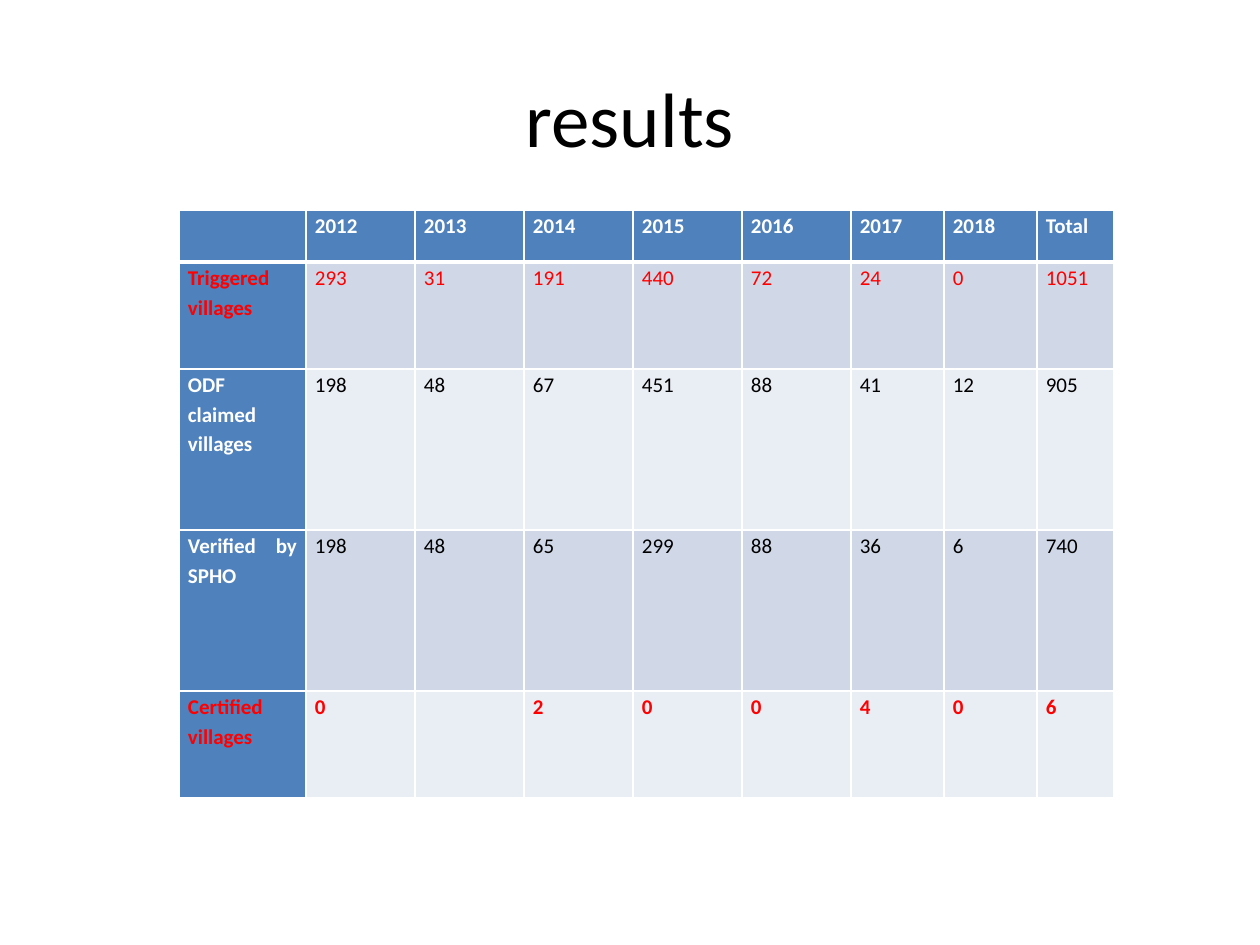
from dataclasses import dataclass

from lxml import etree
from pptx import Presentation
from pptx import util as u
from pptx.dml.color import RGBColor
from pptx.enum import text
from pptx.oxml import ns

PX = 914400 / 126  # EMU in one px


def px(length):
    return u.Emu(round(length * PX))


@dataclass(frozen=True)
class Theme:
    font: str = "Calibri"
    title_size: int = 44
    table_size: int = 12
    black: str = "000000"
    white: str = "FFFFFF"
    red: str = "FF0000"
    blue: str = "4F81BD"
    bands: tuple = ("D0D8E8", "E9EDF4")


def write(frame, words, *, font, size, color, bold=False, align=None, spacing=None):
    """Put one formatted paragraph into a text frame."""
    paragraph = frame.paragraphs[0]
    paragraph.alignment = align
    paragraph.line_spacing = spacing
    run = paragraph.add_run()
    run.text = words
    run.font.name = font
    run.font.size = u.Pt(size)
    run.font.bold = bold
    run.font.color.rgb = RGBColor.from_string(color)


class SlideBuilder:
    def __init__(self, presentation, theme):
        self.theme = theme
        self.slide = presentation.slides.add_slide(presentation.slide_layouts[5])

    def title(self, words, left, top, width, height):
        shape = self.slide.shapes.title
        shape.left, shape.top = px(left), px(top)
        shape.width, shape.height = px(width), px(height)
        shape.text_frame.vertical_anchor = text.MSO_ANCHOR.MIDDLE
        write(shape.text_frame, words, font=self.theme.font,
              size=self.theme.title_size, color=self.theme.black,
              align=text.PP_ALIGN.CENTER)

    def border(self, cell, side, points):
        properties = cell._tc.get_or_add_tcPr()
        line = etree.SubElement(properties, ns.qn(f"a:ln{side}"), w=str(u.Pt(points)))
        fill = etree.SubElement(line, ns.qn("a:solidFill"))
        etree.SubElement(fill, ns.qn("a:srgbClr"), val=self.theme.white)

    def cell(self, cell, words, *, fill, color, bold, top=1, bottom=1):
        cell.margin_left = cell.margin_right = px(9)
        cell.margin_top = cell.margin_bottom = 0
        for side, points in (("L", 1), ("R", 1), ("T", top), ("B", bottom)):
            self.border(cell, side, points)
        cell.fill.solid()
        cell.fill.fore_color.rgb = RGBColor.from_string(fill)
        if words:
            write(cell.text_frame, words, font=self.theme.font,
                  size=self.theme.table_size, color=color, bold=bold,
                  align=text.PP_ALIGN.JUSTIFY, spacing=1.15)

    def table(self, rows, left, top, widths, heights, red_rows, bold_rows):
        theme = self.theme
        frame = self.slide.shapes.add_table(
            len(rows), len(widths), px(left), px(top), px(sum(widths)), px(sum(heights)))
        table = frame.table
        table.first_row = table.horz_banding = False
        for column, width in zip(table.columns, widths):
            column.width = px(width)
        for row, height in zip(table.rows, heights):
            row.height = px(height)

        for r, row in enumerate(rows):
            for c, words in enumerate(row):
                heading = r == 0 or c == 0
                if r in red_rows:
                    color = theme.red
                else:
                    color = theme.white if heading else theme.black
                self.cell(table.cell(r, c), words,
                          fill=theme.blue if heading else theme.bands[(r - 1) % 2],
                          color=color, bold=heading or r in bold_rows,
                          top=3 if r == 1 else 1, bottom=3 if r == 0 else 1)


def main():
    presentation = Presentation()
    presentation.slide_width, presentation.slide_height = px(1260), px(945)
    builder = SlideBuilder(presentation, Theme())

    # Title
    builder.title("results", 63, 38, 1134, 157)

    # Villages by year
    rows = [
        ["", "2012", "2013", "2014", "2015", "2016", "2017", "2018", "Total"],
        ["Triggered villages", "293", "31", "191", "440", "72", "24", "0", "1051"],
        ["ODF claimed villages", "198", "48", "67", "451", "88", "41", "12", "905"],
        ["Verified by SPHO", "198", "48", "65", "299", "88", "36", "6", "740"],
        ["Certified villages", "0", "", "2", "0", "0", "4", "0", "6"],
    ]
    builder.table(rows, 179, 210,
                  widths=[127] + [109] * 5 + [93] * 2 + [77],
                  heights=[52, 107, 161, 161, 107],
                  red_rows=(1, 4), bold_rows=(0, 4))

    presentation.save("out.pptx")


if __name__ == "__main__":
    main()
